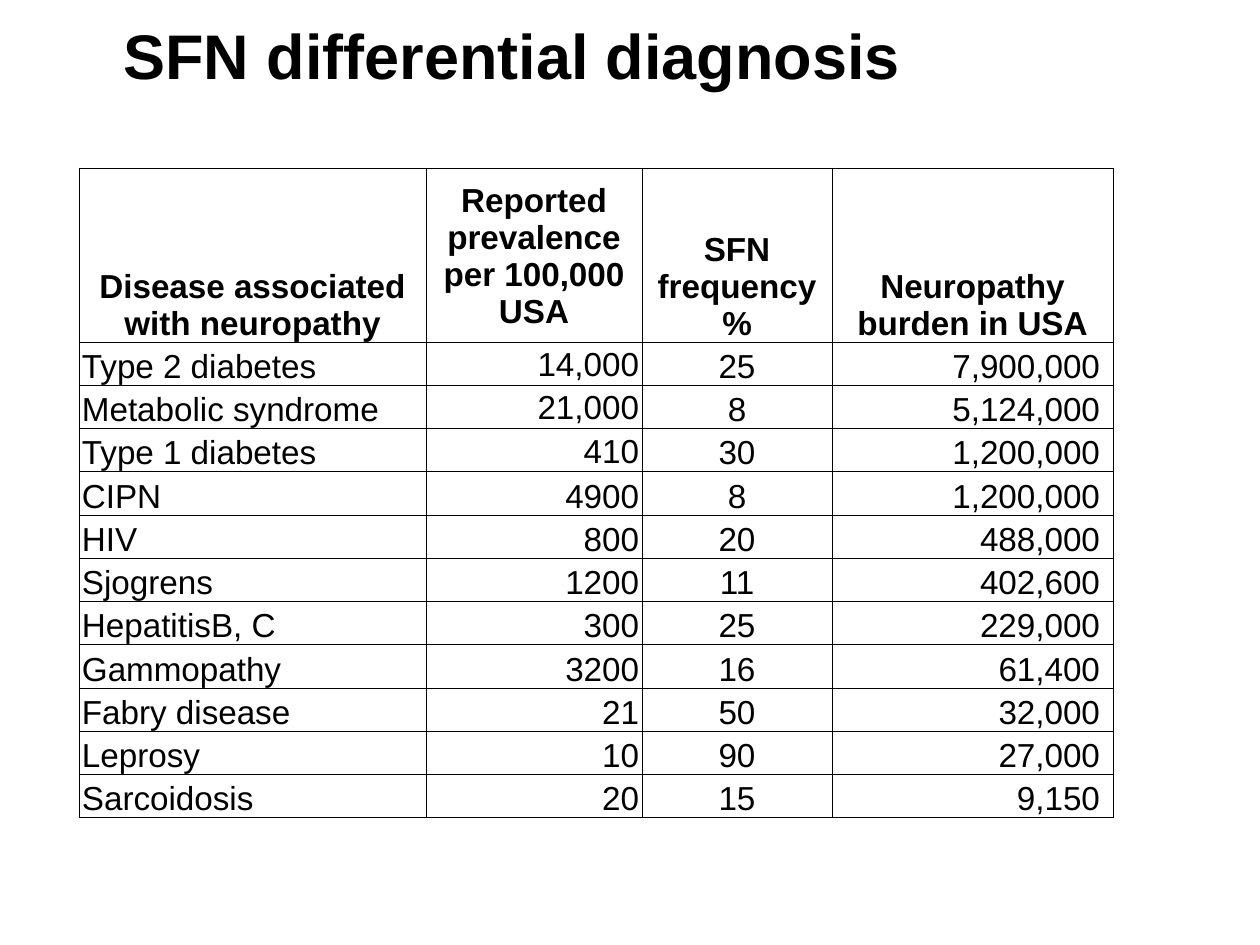
import dataclasses

import lxml.etree
import pptx
import pptx.dml.color
import pptx.enum.text
import pptx.oxml.ns
import pptx.util

ALIGN = pptx.enum.text.PP_ALIGN
ANCHOR = pptx.enum.text.MSO_ANCHOR


@dataclasses.dataclass(frozen=True)
class Theme:
    font: str = "Arial"
    ink: str = "000000"
    title: int = 36
    body: int = 19
    rule: float = 0.5


THEME = Theme()
TITLE = "SFN differential diagnosis"
HEADS = [
    "Disease associated with neuropathy",
    "Reported prevalence per 100,000 USA",
    "SFN frequency %",
    "Neuropathy burden in USA",
]
ROWS = [
    ("Type 2 diabetes", "14,000", "25", "7,900,000"),
    ("Metabolic syndrome", "21,000", "8", "5,124,000"),
    ("Type 1 diabetes", "410", "30", "1,200,000"),
    ("CIPN", "4900", "8", "1,200,000"),
    ("HIV", "800", "20", "488,000"),
    ("Sjogrens", "1200", "11", "402,600"),
    ("HepatitisB, C", "300", "25", "229,000"),
    ("Gammopathy", "3200", "16", "61,400"),
    ("Fabry disease", "21", "50", "32,000"),
    ("Leprosy", "10", "90", "27,000"),
    ("Sarcoidosis", "20", "15", "9,150"),
]
WIDTHS = [347, 216, 190, 281]
ALIGNS = [ALIGN.LEFT, ALIGN.RIGHT, ALIGN.CENTER, ALIGN.RIGHT]
HEAD_HIGH = 174
PAD = 3
LAST_PAD = 13
MID_COL, MID_ROWS = 1, 4  # the header and first three values sit mid-cell


def px(num):
    return pptx.util.Emu(round(num * 914400 / 126))


def style(para, size, bold, align):
    para.alignment = align
    font = para.font
    font.name = THEME.font
    font.size = pptx.util.Pt(size)
    font.bold = bold
    font.color.rgb = pptx.dml.color.RGBColor.from_string(THEME.ink)


def border(cell):
    """Rule all four sides; lines must come before the fill."""
    qn = pptx.oxml.ns.qn
    props = cell._tc.get_or_add_tcPr()
    for spot, side in enumerate(("a:lnL", "a:lnR", "a:lnT", "a:lnB")):
        line = lxml.etree.Element(qn(side), w=str(pptx.util.Pt(THEME.rule)))
        fill = lxml.etree.SubElement(line, qn("a:solidFill"))
        lxml.etree.SubElement(fill, qn("a:srgbClr"), val=THEME.ink)
        props.insert(spot, line)


def add_title(slide, left, top, width, height):
    box = slide.shapes.add_textbox(px(left), px(top), px(width), px(height))
    frame = box.text_frame
    frame.word_wrap = True
    frame.vertical_anchor = ANCHOR.MIDDLE
    frame.text = TITLE
    style(frame.paragraphs[0], THEME.title, True, ALIGN.LEFT)


def fill_cell(cell, text, row, col):
    head = row == 0
    mid = col == MID_COL and row < MID_ROWS
    last = col == len(WIDTHS) - 1 and not head
    cell.text = text
    cell.fill.background()
    cell.vertical_anchor = ANCHOR.MIDDLE if mid else ANCHOR.BOTTOM
    cell.margin_left = cell.margin_top = px(PAD)
    cell.margin_right = px(LAST_PAD if last else PAD)
    cell.margin_bottom = 0
    align = ALIGN.CENTER if head else ALIGNS[col]
    style(cell.text_frame.paragraphs[0], THEME.body, head, align)
    border(cell)


def add_grid(slide, left, top, width, height):
    data = [HEADS, *ROWS]
    table = slide.shapes.add_table(
        len(data), len(HEADS), px(left), px(top), px(width), px(height)
    ).table
    table.first_row = table.horz_banding = False
    for col, wide in zip(table.columns, WIDTHS):
        col.width = px(width * wide / sum(WIDTHS))
    for row, line in enumerate(data):
        high = (height - HEAD_HIGH) / len(ROWS) if row else HEAD_HIGH
        table.rows[row].height = px(high)
        for col, text in enumerate(line):
            fill_cell(table.cell(row, col), text, row, col)


def main():
    deck = pptx.Presentation()
    deck.slide_width, deck.slide_height = px(1260), px(945)
    slide = deck.slides.add_slide(deck.slide_layouts[6])
    add_title(slide, 111, 0, 1040, 108)
    add_grid(slide, 79, 168, 1034, 650)
    deck.save("out.pptx")


if __name__ == "__main__":
    main()
